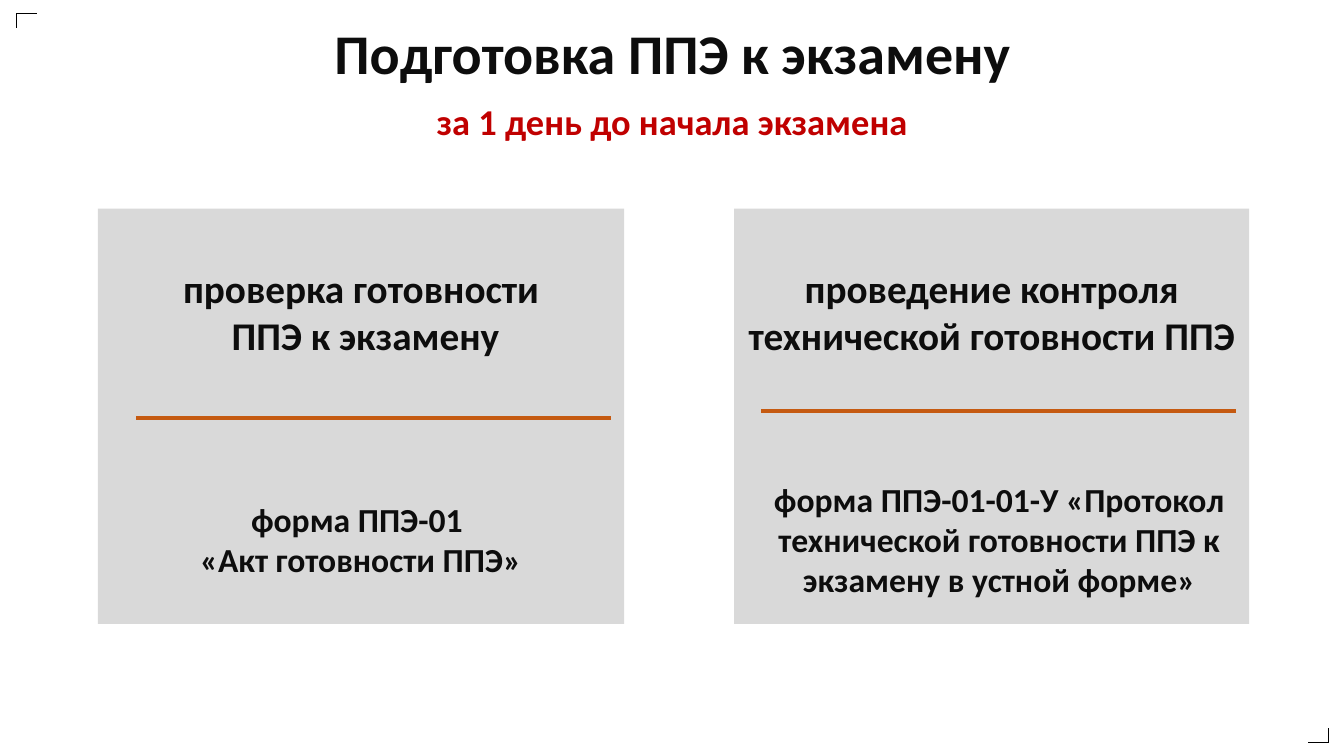
"""Build the slide on preparing an exam centre one day before the exam."""
import pptx
import pptx.dml.color
import pptx.enum.shapes
import pptx.enum.text
import pptx.oxml.ns
import pptx.util
from lxml import etree
from pptx.util import Inches

BLACK = pptx.dml.color.RGBColor(0x00, 0x00, 0x00)
INK = pptx.dml.color.RGBColor(0x0D, 0x0D, 0x0D)
RED = pptx.dml.color.RGBColor(0xC0, 0x00, 0x00)
ORANGE = pptx.dml.color.RGBColor(0xC5, 0x5A, 0x11)
GREY = pptx.dml.color.RGBColor(0xD9, 0xD9, 0xD9)


def write_text(shape, lines, size, color=INK, top_margin=0.05):
    """Write bold centred lines from the top of a shape."""
    frame = shape.text_frame
    frame.word_wrap = True
    frame.vertical_anchor = pptx.enum.text.MSO_ANCHOR.TOP
    frame.margin_top = Inches(top_margin)
    for index, line in enumerate(lines):
        paragraph = frame.add_paragraph() if index else frame.paragraphs[0]
        paragraph.alignment = pptx.enum.text.PP_ALIGN.CENTER
        run = paragraph.add_run()
        run.text = line
        run.font.name = "Calibri"
        run.font.size = pptx.util.Pt(size)
        run.font.bold = True
        run.font.color.rgb = color


def add_label(slide, box, lines, size, color=INK):
    """Add a text box with formatted lines."""
    label = slide.shapes.add_textbox(*map(Inches, box))
    write_text(label, lines, size, color)


def add_panel(slide, left, width, lines):
    """Add a grey panel with its heading."""
    panel = slide.shapes.add_shape(
        pptx.enum.shapes.MSO_SHAPE.RECTANGLE,
        Inches(left), Inches(2.07), Inches(width), Inches(4.12))
    panel.shadow.inherit = False
    panel.fill.solid()
    panel.fill.fore_color.rgb = GREY
    panel.line.fill.background()
    write_text(panel, lines, 28, top_margin=0.55)


def add_rule(slide, start, end, color, weight):
    """Add a straight line without a shadow."""
    rule = slide.shapes.add_connector(
        pptx.enum.shapes.MSO_CONNECTOR.STRAIGHT,
        *map(Inches, (*start, *end)))
    rule.line.color.rgb = color
    rule.line.width = pptx.util.Pt(weight)
    properties = rule._element.spPr
    etree.SubElement(properties, pptx.oxml.ns.qn("a:effectLst"))


def add_corner(slide, x, y, direction):
    """Add a corner mark whose arms run inwards from its vertex."""
    for across, down in ((0, 0.15), (0.21, 0)):
        end = (x + direction * across, y + direction * down)
        add_rule(slide, (x, y), end, BLACK, 0.75)


def main():
    """Create the presentation and save it."""
    presentation = pptx.Presentation()
    presentation.slide_width = Inches(13.33)
    presentation.slide_height = Inches(7.5)
    slide = presentation.slides.add_slide(presentation.slide_layouts[6])

    add_panel(slide, 0.97, 5.22, ["проверка готовности", " ППЭ к экзамену"])
    add_panel(slide, 7.28, 5.11,
              ["проведение контроля технической готовности ППЭ"])

    add_corner(slide, 0.16, 0.13, 1)
    add_corner(slide, 13.18, 7.37, -1)

    add_label(slide, (1.02, 4.9, 5.04, 0.91),
              ["форма ППЭ-01", " «Акт готовности ППЭ»"], 24)
    add_label(slide, (7.42, 4.7, 4.98, 1.31),
              ["форма ППЭ-01-01-У «Протокол технической готовности ППЭ "
               "к экзамену в устной форме»"], 24)
    add_label(slide, (0.37, 0.93, 12.6, 0.54),
              ["за 1 день до начала экзамена"], 26, RED)
    add_label(slide, (0.37, 0.13, 12.6, 0.77),
              ["Подготовка ППЭ к экзамену"], 40)

    for left, y in ((1.35, 4.15), (7.55, 4.08)):
        add_rule(slide, (left, y), (left + 4.71, y), ORANGE, 3)

    presentation.save("out.pptx")


if __name__ == "__main__":
    main()
